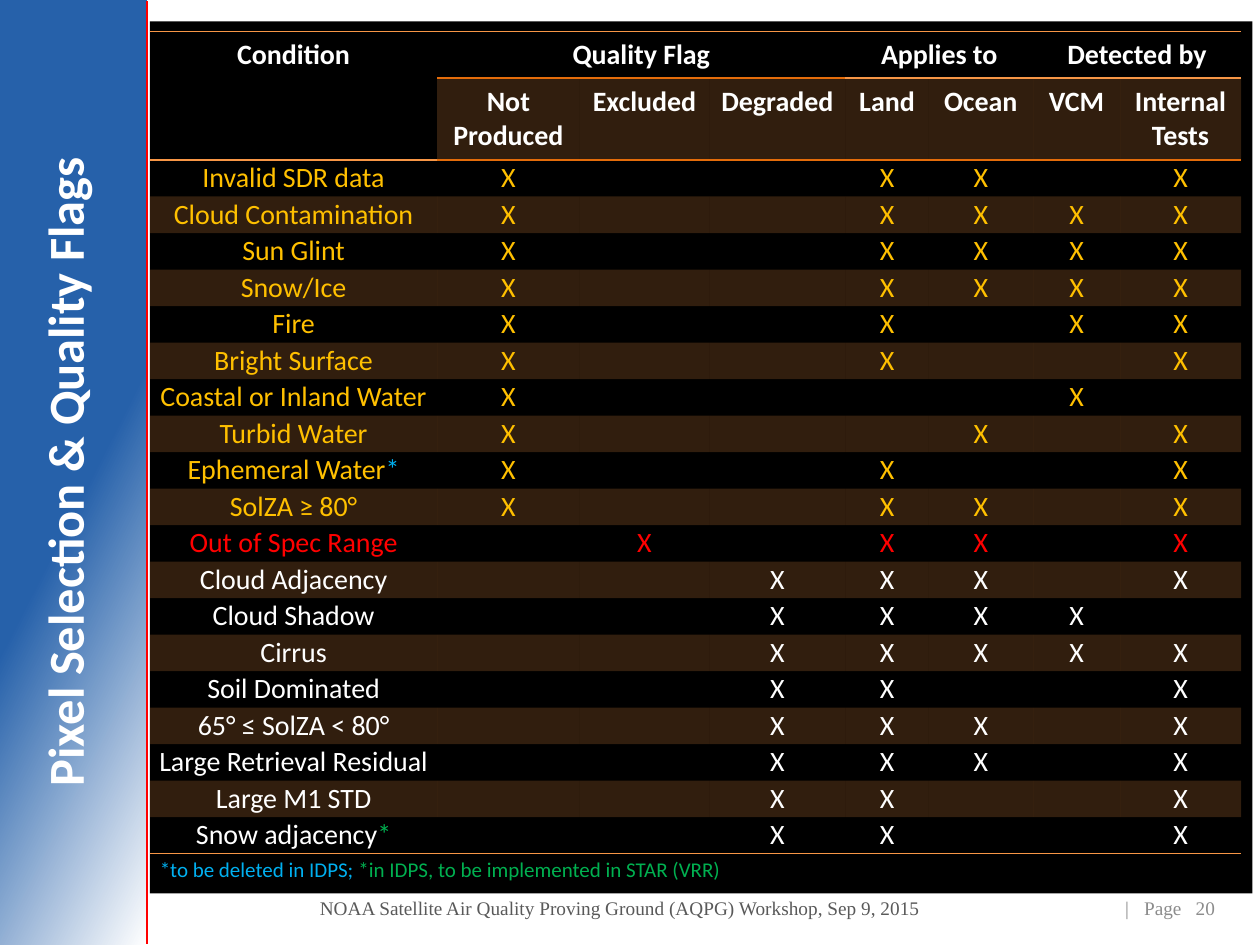
import pptx
import pptx.dml.color
import pptx.enum.dml
import pptx.enum.shapes
import pptx.enum.text
import pptx.oxml.ns
import pptx.util
from lxml import etree

Inches, Pt = pptx.util.Inches, pptx.util.Pt
qn = pptx.oxml.ns.qn
ALIGN, ANCHOR = pptx.enum.text.PP_ALIGN, pptx.enum.text.MSO_ANCHOR
SHAPE = pptx.enum.shapes.MSO_SHAPE

WHITE, GOLD, RED = "FFFFFF", "FFC000", "FF0000"
SKY, GREEN = "00B0F0", "00B050"
ORANGE, DARK_ORANGE = "F79646", "E46C0A"

TITLE = "Pixel Selection & Quality Flags"
FOOTER = "NOAA Satellite Air Quality Proving Ground (AQPG) Workshop, Sep 9, 2015"
FOOTNOTE = [("*to be deleted in IDPS; ", SKY),
            ("*in IDPS, to be implemented in STAR (VRR)", GREEN)]

# Heading, first column, last column, colour of the rule below
GROUPS = [("Quality Flag", 1, 3, DARK_ORANGE), ("Applies to", 4, 5, ORANGE),
          ("Detected by", 6, 7, ORANGE)]
# Code used in the rows below, heading
FLAGS = [("N", "Not Produced"), ("E", "Excluded"), ("D", "Degraded"), ("L", "Land"),
         ("O", "Ocean"), ("V", "VCM"), ("I", "Internal Tests")]
# Condition, codes of the marked columns, text colour
CONDITIONS = [
    ("Invalid SDR data", "NLOI", GOLD),
    ("Cloud Contamination", "NLOVI", GOLD),
    ("Sun Glint", "NLOVI", GOLD),
    ("Snow/Ice", "NLOVI", GOLD),
    ("Fire", "NLVI", GOLD),
    ("Bright Surface", "NLI", GOLD),
    ("Coastal or Inland Water", "NV", GOLD),
    ("Turbid Water", "NOI", GOLD),
    ("Ephemeral Water*", "NLI", GOLD),
    ("SolZA ≥ 80°", "NLOI", GOLD),
    ("Out of Spec Range", "ELOI", RED),
    ("Cloud Adjacency", "DLOI", WHITE),
    ("Cloud Shadow", "DLOV", WHITE),
    ("Cirrus", "DLOVI", WHITE),
    ("Soil Dominated", "DLI", WHITE),
    ("65° ≤ SolZA < 80°", "DLOI", WHITE),
    ("Large Retrieval Residual", "DLOI", WHITE),
    ("Large M1 STD", "DLI", WHITE),
    ("Snow adjacency*", "DLI", WHITE),
]
STAR_COLORS = {"Ephemeral Water*": SKY, "Snow adjacency*": GREEN}
COLUMN_WIDTHS = [2.28, 1.13, 1.03, 1.08, 0.66, 0.83, 0.69, 0.96]
HEADER_HEIGHTS, ROW_HEIGHT = [0.37, 0.65], 0.29
PLAIN_TABLE_STYLE = "{2D5ABB26-0587-4C30-8999-92F81FD0307C}"


def rgb(code):
    return pptx.dml.color.RGBColor.from_string(code)


def write(paragraph, spans, size, font="Calibri", bold=False, align=ALIGN.CENTER):
    """Fill a paragraph with (text, colour) spans."""
    paragraph.alignment = align
    for text, color in spans:
        span = paragraph.add_run()
        span.text = text
        span.font.size, span.font.name, span.font.bold = Pt(size), font, bold
        span.font.color.rgb = rgb(color)


def add_text(page, place, spans, size, anchor, wrap=True, **style):
    box = page.shapes.add_textbox(*map(Inches, place))
    frame = box.text_frame
    frame.word_wrap, frame.vertical_anchor = wrap, anchor
    write(frame.paragraphs[0], spans, size, **style)
    return box


def add_panel(page, place):
    panel = page.shapes.add_shape(SHAPE.RECTANGLE, *map(Inches, place))
    panel.shadow.inherit = False
    panel.line.fill.background()
    return panel


def add_side_band(page):
    band = add_panel(page, (-3.17, 3.17, 7.5, 1.17))
    band.rotation = 270
    band.fill.gradient()
    band.fill.gradient_angle = 63
    for stop, position, color in zip(band.fill.gradient_stops, (0, 0.47), (WHITE, "2661AA")):
        stop.position = position
        stop.color.rgb = rgb(color)
    edge = page.shapes.add_connector(pptx.enum.shapes.MSO_CONNECTOR.STRAIGHT,
                                     Inches(1.17), Inches(7.49), Inches(1.17), Inches(0.01))
    edge.line.color.rgb, edge.line.width = rgb(RED), Pt(1.25)
    etree.SubElement(edge._element.spPr, qn("a:effectLst"))


def set_border(cell, side, color):
    """Rule one side of a cell; call for "B" before "T", after the fill."""
    line = etree.Element(qn("a:ln" + side), w=str(Pt(1)))
    fill = etree.SubElement(line, qn("a:solidFill"))
    etree.SubElement(fill, qn("a:srgbClr"), val=color)
    cell._tc.get_or_add_tcPr().insert(0, line)


def fill_cell(cell, shaded):
    if not shaded:
        cell.fill.background()
        return
    cell.fill.solid()
    cell.fill.fore_color.rgb = rgb(ORANGE)
    color = cell._tc.tcPr.find(".//" + qn("a:srgbClr"))
    etree.SubElement(color, qn("a:alpha"), val="20000")


def write_heading(cell, text):
    cell.margin_left = cell.margin_right = Inches(0.09)
    cell.margin_top = cell.margin_bottom = Inches(0.05)
    write(cell.text_frame.paragraphs[0], [(text, WHITE)], 16, bold=True)


def write_entry(cell, text, color):
    cell.margin_left = cell.margin_right = Inches(0.07)
    cell.margin_top = cell.margin_bottom = 0
    cell.vertical_anchor = ANCHOR.MIDDLE
    paragraph = cell.text_frame.paragraphs[0]
    if not text:
        etree.SubElement(paragraph._p, qn("a:endParaRPr"), sz="1600")
        return
    spans = [(text, color)]
    if text in STAR_COLORS:
        spans = [(text[:-1], color), ("*", STAR_COLORS[text])]
    write(paragraph, spans, 16)


def add_flag_table(page):
    heights = HEADER_HEIGHTS + [ROW_HEIGHT] * len(CONDITIONS)
    frame = page.shapes.add_table(len(heights), len(COLUMN_WIDTHS), Inches(1.19), Inches(0.25),
                                  Inches(sum(COLUMN_WIDTHS)), Inches(sum(heights)))
    table = frame.table
    table.first_row = table.horz_banding = False
    table._tbl.tblPr.find(qn("a:tableStyleId")).text = PLAIN_TABLE_STYLE
    for column, width in zip(table.columns, COLUMN_WIDTHS):
        column.width = Inches(width)
    for row, height in zip(table.rows, heights):
        row.height = Inches(height)

    last = len(heights) - 1
    for r in range(len(heights)):
        for c in range(len(COLUMN_WIDTHS)):
            fill_cell(table.cell(r, c), r % 2 == 1 and (r > 1 or c > 0))

    write_heading(table.cell(0, 0), "Condition")
    for text, first, end, rule in GROUPS:
        write_heading(table.cell(0, first), text)
        for c in range(first, end + 1):
            set_border(table.cell(0, c), "B", rule)
        table.cell(0, first).merge(table.cell(0, end))
    for c, (code, text) in enumerate(FLAGS, 1):
        write_heading(table.cell(1, c), text)
    for r, (condition, marks, color) in enumerate(CONDITIONS, 2):
        write_entry(table.cell(r, 0), condition, color)
        for c, (code, text) in enumerate(FLAGS, 1):
            write_entry(table.cell(r, c), "X" if code in marks else "", color)

    set_border(table.cell(0, 0), "B", ORANGE)
    for c in range(len(COLUMN_WIDTHS)):
        set_border(table.cell(0, c), "T", ORANGE)
        set_border(table.cell(1, c), "B", DARK_ORANGE if c else ORANGE)
        set_border(table.cell(last, c), "B", ORANGE)
    table.cell(0, 0).merge(table.cell(1, 0))


def add_page_number(page):
    box = add_text(page, (8.33, 6.95, 1.42, 0.4), [("|\tPage\t20", "8C8C8C")], 11,
                   ANCHOR.BOTTOM, font="Times New Roman", align=ALIGN.LEFT)
    box.text_frame.margin_left = Inches(0.6)
    properties = box.text_frame.paragraphs[0]._p.get_or_add_pPr()
    tabs = etree.SubElement(properties, qn("a:tabLst"))
    for position in (0.15, 0.56):
        etree.SubElement(tabs, qn("a:tab"), pos=str(Inches(position)), algn="l")


def main():
    deck = pptx.Presentation()
    deck.slide_width, deck.slide_height = Inches(10), Inches(7.5)
    page = deck.slides.add_slide(deck.slide_layouts[6])

    add_side_band(page)
    backdrop = add_panel(page, (1.19, 0.17, 8.75, 6.92))
    backdrop.fill.solid()
    backdrop.fill.fore_color.rgb = rgb("000000")
    title = add_text(page, (-2.33, 3.33, 5.67, 0.83), [(TITLE, WHITE)], 28.8,
                     ANCHOR.MIDDLE, bold=True)
    title.rotation = 270
    add_flag_table(page)
    add_text(page, (1.67, 6.95, 6.5, 0.4), [(FOOTER, "595959")], 11, ANCHOR.BOTTOM,
             font="Times New Roman")
    add_page_number(page)
    add_text(page, (1.17, 6.75, 4.7, 0.3), FOOTNOTE, 12, ANCHOR.TOP, wrap=False,
             align=ALIGN.LEFT)
    deck.save("out.pptx")


if __name__ == "__main__":
    main()
